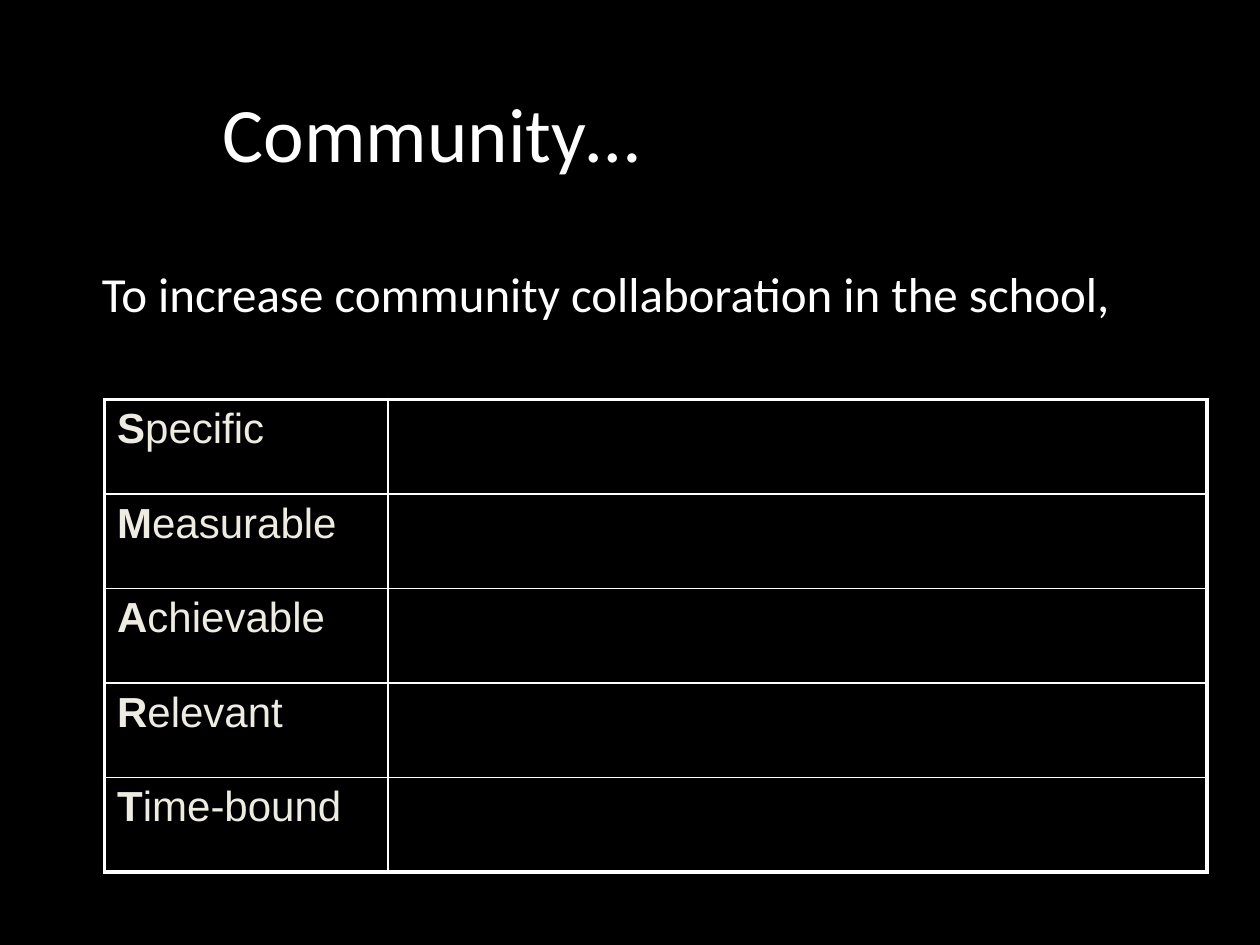
from lxml import etree
from pptx import Presentation
from pptx import util as u
from pptx.dml.color import RGBColor
from pptx.enum import text
from pptx.oxml import ns

COLORS = {"background": "000000", "line": "FFFFFF", "text": "FFFFFF", "goal": "EEECE1"}
GOALS = ["Specific", "Measurable", "Achievable", "Relevant", "Time-bound"]
OUTER, INNER = 2.25, 1


def rgb(name):
    return RGBColor.from_string(COLORS[name])


class SlideBuilder:
    """Holds the current slide and its text style."""

    def __init__(self, slide, font="Calibri"):
        self.slide = slide
        self.font = font

    def background(self, color):
        fill = self.slide.background.fill
        fill.solid()
        fill.fore_color.rgb = rgb(color)

    def run(self, paragraph, words, size, color="text", font=None, bold=False):
        run = paragraph.add_run()
        run.text = words
        run.font.size = u.Pt(size)
        run.font.name = font or self.font
        run.font.bold = bold
        run.font.color.rgb = rgb(color)

    def textbox(self, left, top, width, height, runs, anchor, hanging=0):
        """Add one paragraph of (words, size) runs with a hanging indent."""
        box = self.slide.shapes.add_textbox(*map(u.Inches, (left, top, width, height)))
        frame = box.text_frame
        frame.word_wrap = True
        frame.vertical_anchor = anchor
        paragraph = frame.paragraphs[0]
        if hanging:
            properties = paragraph._p.get_or_add_pPr()
            properties.set("marL", str(u.Inches(hanging)))
            properties.set("indent", str(-u.Inches(hanging)))
        for words, size in runs:
            self.run(paragraph, words, size)

    def borders(self, cell, widths):
        """Draw the left, right, top and bottom lines, widths in points."""
        properties = cell._tc.get_or_add_tcPr()
        for index, (side, width) in enumerate(zip("LRTB", widths)):
            line = etree.Element(ns.qn(f"a:ln{side}"), w=str(u.Pt(width)))
            fill = etree.SubElement(line, ns.qn("a:solidFill"))
            etree.SubElement(fill, ns.qn("a:srgbClr"), val=COLORS["line"])
            properties.insert(index, line)

    def goal_table(self, left, top, column_widths, row_height, goals):
        """List the goals, bold initial first, beside empty cells to fill in."""
        rows, columns = len(goals), len(column_widths)
        table = self.slide.shapes.add_table(
            rows, columns, u.Inches(left), u.Inches(top),
            u.Inches(sum(column_widths)), u.Inches(row_height * rows)).table
        table.first_row = table.horz_banding = False
        for column, width in zip(table.columns, column_widths):
            column.width = u.Inches(width)
        for r, goal in enumerate(goals):
            for c in range(columns):
                cell = table.cell(r, c)
                cell.fill.solid()
                cell.fill.fore_color.rgb = rgb("background")
                edges = (c == 0, c == columns - 1, r == 0, r == rows - 1)
                self.borders(cell, [OUTER if edge else INNER for edge in edges])
            paragraph = table.cell(r, 0).text_frame.paragraphs[0]
            self.run(paragraph, goal[0], 24, "goal", "Arial", bold=True)
            self.run(paragraph, goal[1:], 24, "goal", "Arial")


def main():
    deck = Presentation()
    deck.slide_width, deck.slide_height = u.Inches(10), u.Inches(7.5)
    builder = SlideBuilder(deck.slides.add_slide(deck.slide_layouts[6]))
    builder.background("background")
    builder.textbox(1.67, 0.21, 8, 1.67, [("Community…", 44)], text.MSO_ANCHOR.MIDDLE)
    builder.textbox(
        0.33, 1.92, 9.33, 1.17,
        [("\t", 37), ("To increase community collaboration in the school,", 28)],
        text.MSO_ANCHOR.TOP, hanging=0.38)
    builder.goal_table(0.83, 3.17, [2.25, 6.5], 0.75, GOALS)
    deck.save("out.pptx")


if __name__ == "__main__":
    main()
